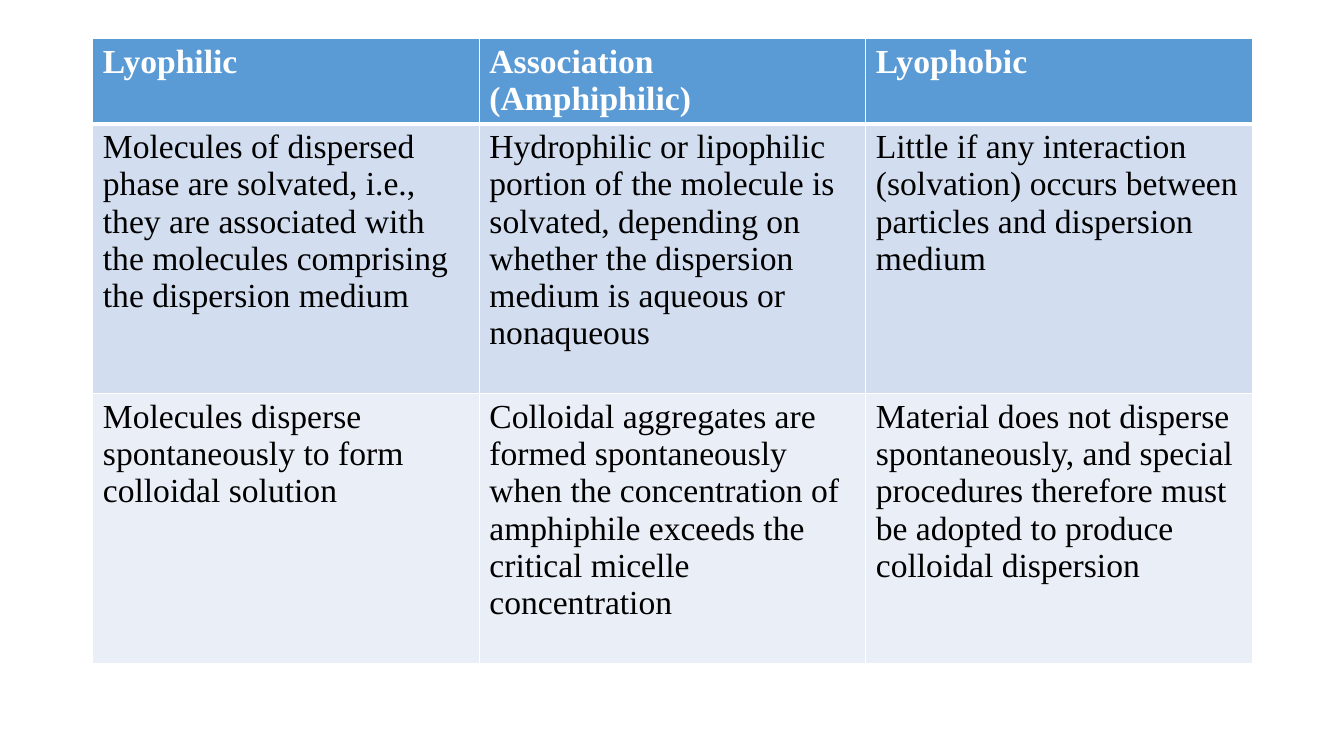
from lxml import etree
from pptx import Presentation
from pptx.dml.color import RGBColor
from pptx.oxml.ns import qn
from pptx.util import Cm, Pt

WHITE = RGBColor(0xFF, 0xFF, 0xFF)
BLACK = RGBColor(0x00, 0x00, 0x00)
HEADER_BLUE = RGBColor(0x5B, 0x9B, 0xD5)
BAND_DARK = RGBColor(0xD2, 0xDE, 0xEF)
BAND_LIGHT = RGBColor(0xEA, 0xEF, 0xF7)

COLLOID_TYPES = ["Lyophilic", "Association (Amphiphilic)", "Lyophobic"]
SOLVATION = [
    "Molecules of dispersed phase are solvated, i.e., they are associated with "
    "the molecules comprising the dispersion medium",
    "Hydrophilic or lipophilic portion of the molecule is solvated, depending on "
    "whether the dispersion medium is aqueous or nonaqueous",
    "Little if any interaction (solvation) occurs between particles and "
    "dispersion medium",
]
FORMATION = [
    "Molecules disperse spontaneously to form colloidal solution",
    "Colloidal aggregates are formed spontaneously when the concentration of "
    "amphiphile exceeds the critical micelle concentration",
    "Material does not disperse spontaneously, and special procedures therefore "
    "must be adopted to produce colloidal dispersion",
]


def write_text(frame, text, size=24, color=BLACK, bold=False):
    """Write one formatted run into a text frame."""
    run = frame.paragraphs[0].add_run()
    run.text = text
    run.font.name = "Times New Roman"
    run.font.size = Pt(size)
    run.font.bold = bold
    run.font.color.rgb = color


def set_borders(cell, top=1, bottom=1):
    """Draw white borders around a cell, with widths in points."""
    properties = cell._tc.get_or_add_tcPr()
    for side, width in (("L", 1), ("R", 1), ("T", top), ("B", bottom)):
        border = etree.SubElement(properties, qn(f"a:ln{side}"), w=str(Pt(width)))
        fill = etree.SubElement(border, qn("a:solidFill"))
        etree.SubElement(fill, qn("a:srgbClr"), val=str(WHITE))


def fill_row(table, index, texts, height, background, top=1, bottom=1, **text_format):
    """Fill one table row with texts in a common format."""
    table.rows[index].height = height
    for cell, text in zip(table.rows[index].cells, texts):
        set_borders(cell, top, bottom)
        cell.fill.solid()
        cell.fill.fore_color.rgb = background
        write_text(cell.text_frame, text, **text_format)


def add_comparison(slide):
    """Add the table that compares the three colloid types."""
    header_height, body_height, column_width = Cm(2.14), Cm(6.8), Cm(9.74)
    table = slide.shapes.add_table(
        3, len(COLLOID_TYPES), Cm(2.34), Cm(0.98),
        column_width * len(COLLOID_TYPES), header_height + 2 * body_height,
    ).table
    for column in table.columns:
        column.width = column_width
    fill_row(table, 0, COLLOID_TYPES, header_height, HEADER_BLUE,
             bottom=3, color=WHITE, bold=True)
    fill_row(table, 1, SOLVATION, body_height, BAND_DARK, top=3)
    fill_row(table, 2, FORMATION, body_height, BAND_LIGHT)


def main():
    """Build the slide and save the presentation."""
    presentation = Presentation()
    presentation.slide_width = Cm(33.87)
    presentation.slide_height = Cm(19.05)
    slide = presentation.slides.add_slide(presentation.slide_layouts[6])
    add_comparison(slide)
    presentation.save("out.pptx")


if __name__ == "__main__":
    main()
